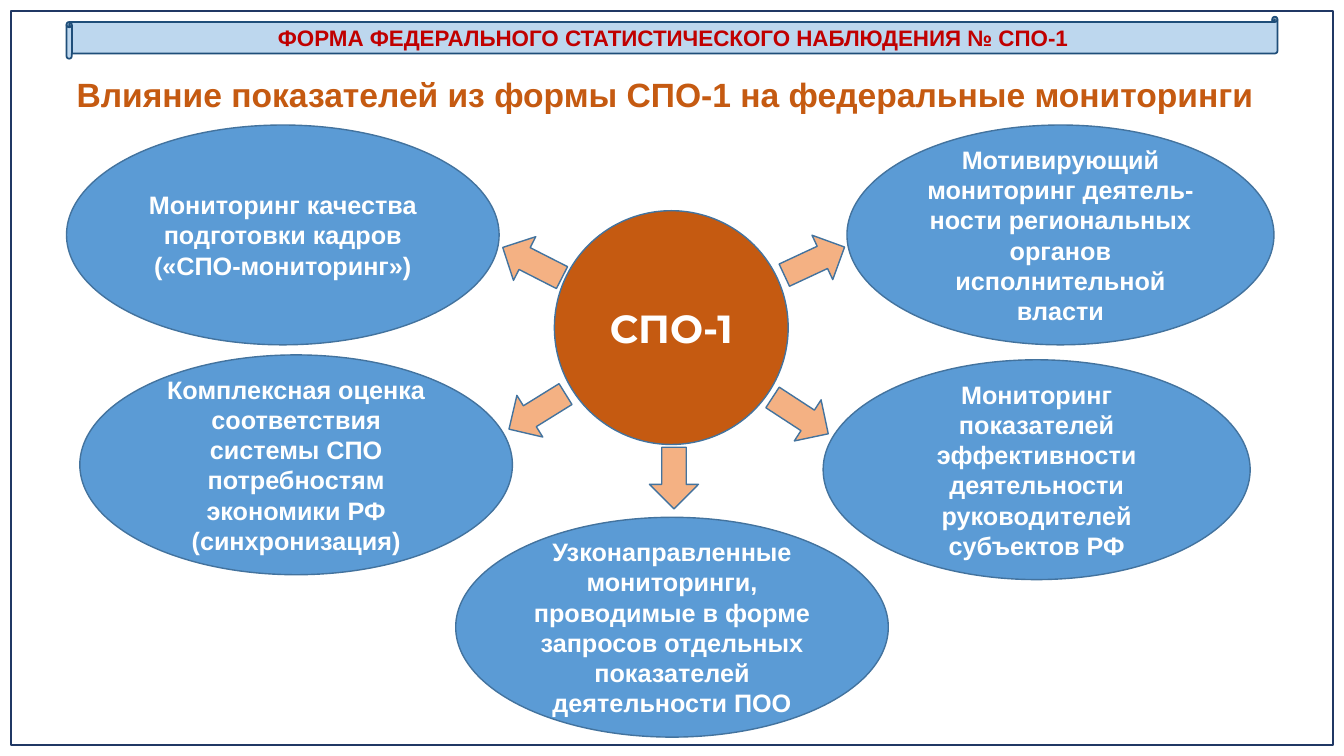
from dataclasses import dataclass

from pptx import Presentation
from pptx.dml.color import RGBColor
from pptx.enum import shapes, text
from pptx.util import Pt


@dataclass(frozen=True)
class Theme:
    font: str = "Arial"
    hub_font: str = "Montserrat"
    frame: str = "203864"
    banner_fill: str = "BDD7EE"
    banner_line: str = "1F4E79"
    banner_text: str = "C00000"
    accent: str = "C55A11"
    bubble: str = "5B9BD5"
    outline: str = "43739E"
    arrow: str = "F4B183"
    white: str = "FFFFFF"
    banner_size: float = 16
    title_size: float = 24
    bubble_size: float = 18
    hub_size: float = 28


THEME = Theme()
KIND = shapes.MSO_SHAPE
BUBBLE_HEIGHT = 157

MONITORINGS = [
    (588, 257, 305, "Мониторинг показателей эффективности деятельности руководителей субъектов РФ"),
    (47.5, 89.3, 309, "Мониторинг качества подготовки кадров («СПО-мониторинг»)"),
    (605, 89.3, 305, "Мотивирующий мониторинг деятель-ности региональных органов исполнительной власти"),
    (57, 253.5, 309, "Комплексная оценка соответствия системы СПО потребностям экономики РФ (синхронизация)"),
    (325.5, 369.5, 309, "Узконаправленные мониторинги, проводимые в форме запросов отдельных показателей деятельности ПОО"),
]

ARROWS = [
    (356.5, 170, 47.5, 207),
    (558, 169, 47.5, 335),
    (459.4, 324, 44, 90),
    (548, 279.4, 47.5, 33.1),
    (360, 276.5, 47.5, 148.2),
]


def write(frame, wording, size, color, font=THEME.font,
          align=text.PP_ALIGN.CENTER, anchor=text.MSO_ANCHOR.MIDDLE):
    frame.word_wrap = True
    frame.vertical_anchor = anchor
    paragraph = frame.paragraphs[0]
    paragraph.alignment = align
    run = paragraph.add_run()
    run.text = wording
    run.font.name = font
    run.font.size = Pt(size)
    run.font.bold = True
    run.font.color.rgb = RGBColor.from_string(color)


def add_figure(slide, kind, box, fill=None, line=THEME.outline, weight=1):
    figure = slide.shapes.add_shape(kind, *map(Pt, box))
    figure.shadow.inherit = False
    if fill:
        figure.fill.solid()
        figure.fill.fore_color.rgb = RGBColor.from_string(fill)
    else:
        figure.fill.background()
    figure.line.color.rgb = RGBColor.from_string(line)
    figure.line.width = Pt(weight)
    return figure


def add_banner(slide, wording):
    banner = add_figure(slide, KIND.HORIZONTAL_SCROLL, (47.5, 12, 865, 30),
                        THEME.banner_fill, THEME.banner_line, 1.25)
    write(banner.text_frame, wording, THEME.banner_size, THEME.banner_text)


def set_title(slide, wording):
    title = slide.shapes.title
    title.left, title.top, title.width, title.height = map(Pt, (47.5, 49, 865, 36))
    title.text_frame.auto_size = text.MSO_AUTO_SIZE.NONE
    write(title.text_frame, wording, THEME.title_size, THEME.accent,
          align=text.PP_ALIGN.LEFT, anchor=text.MSO_ANCHOR.TOP)


def add_monitoring(slide, left, top, width, wording):
    bubble = add_figure(slide, KIND.OVAL, (left, top, width, BUBBLE_HEIGHT), THEME.bubble)
    write(bubble.text_frame, wording, THEME.bubble_size, THEME.white)


def add_hub(slide, wording):
    hub = add_figure(slide, KIND.OVAL, (396, 150.5, 167, 167), THEME.accent)
    write(hub.text_frame, wording, THEME.hub_size, THEME.white, THEME.hub_font)


def add_arrow(slide, left, top, length, angle):
    arrow = add_figure(slide, KIND.RIGHT_ARROW, (left, top, length, 35), THEME.arrow)
    arrow.rotation = angle


def main():
    deck = Presentation()
    deck.slide_width, deck.slide_height = Pt(960), Pt(540)
    slide = deck.slides.add_slide(deck.slide_layouts.get_by_name("Title Only"))
    add_figure(slide, KIND.RECTANGLE, (8, 8, 944, 524), line=THEME.frame, weight=1.5)
    add_banner(slide, "ФОРМА ФЕДЕРАЛЬНОГО СТАТИСТИЧЕСКОГО НАБЛЮДЕНИЯ № СПО-1")
    set_title(slide, "Влияние показателей из формы СПО-1 на федеральные мониторинги")
    for monitoring in MONITORINGS:
        add_monitoring(slide, *monitoring)
    add_hub(slide, "СПО-1")
    for arrow in ARROWS:
        add_arrow(slide, *arrow)
    deck.save("out.pptx")


if __name__ == "__main__":
    main()
